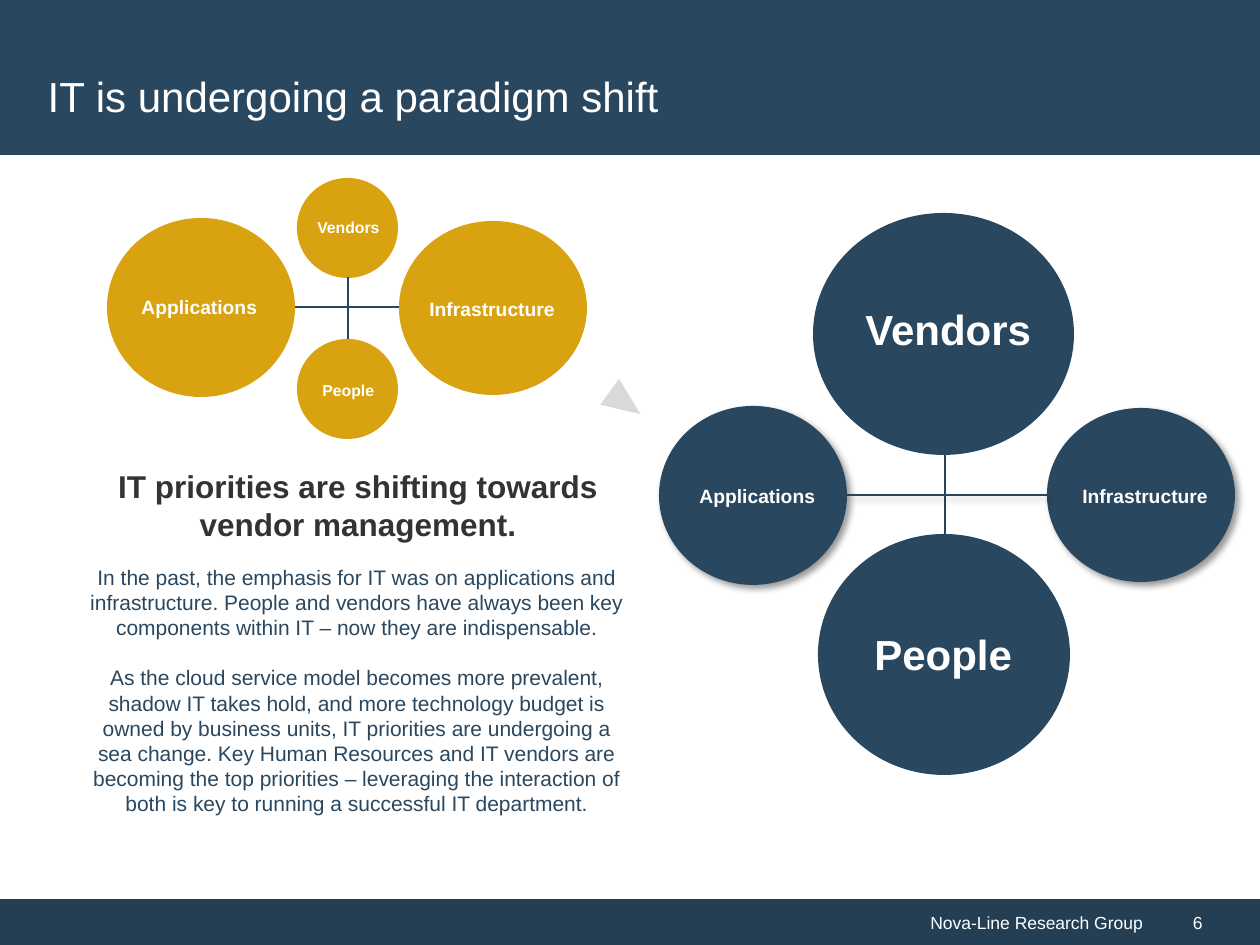
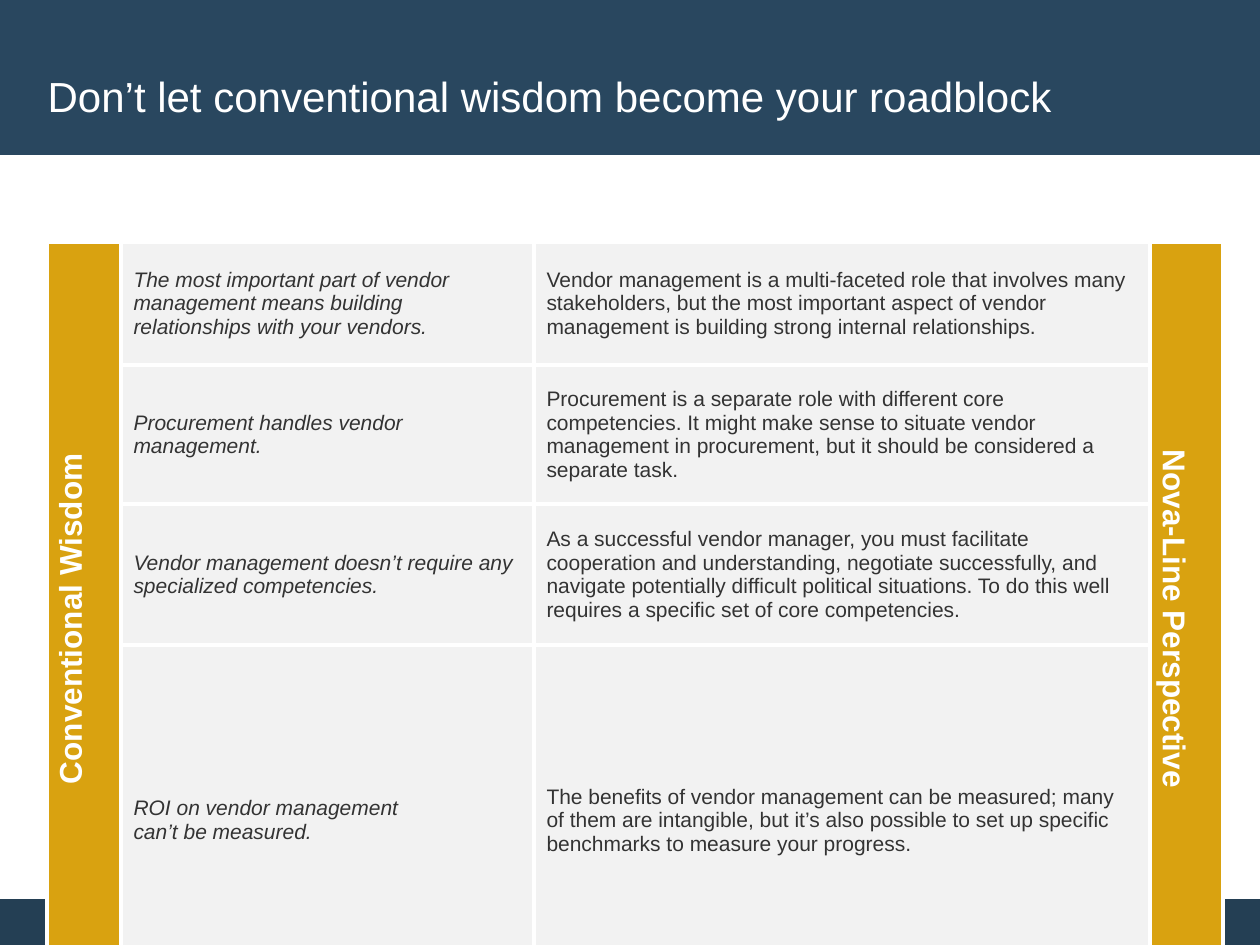
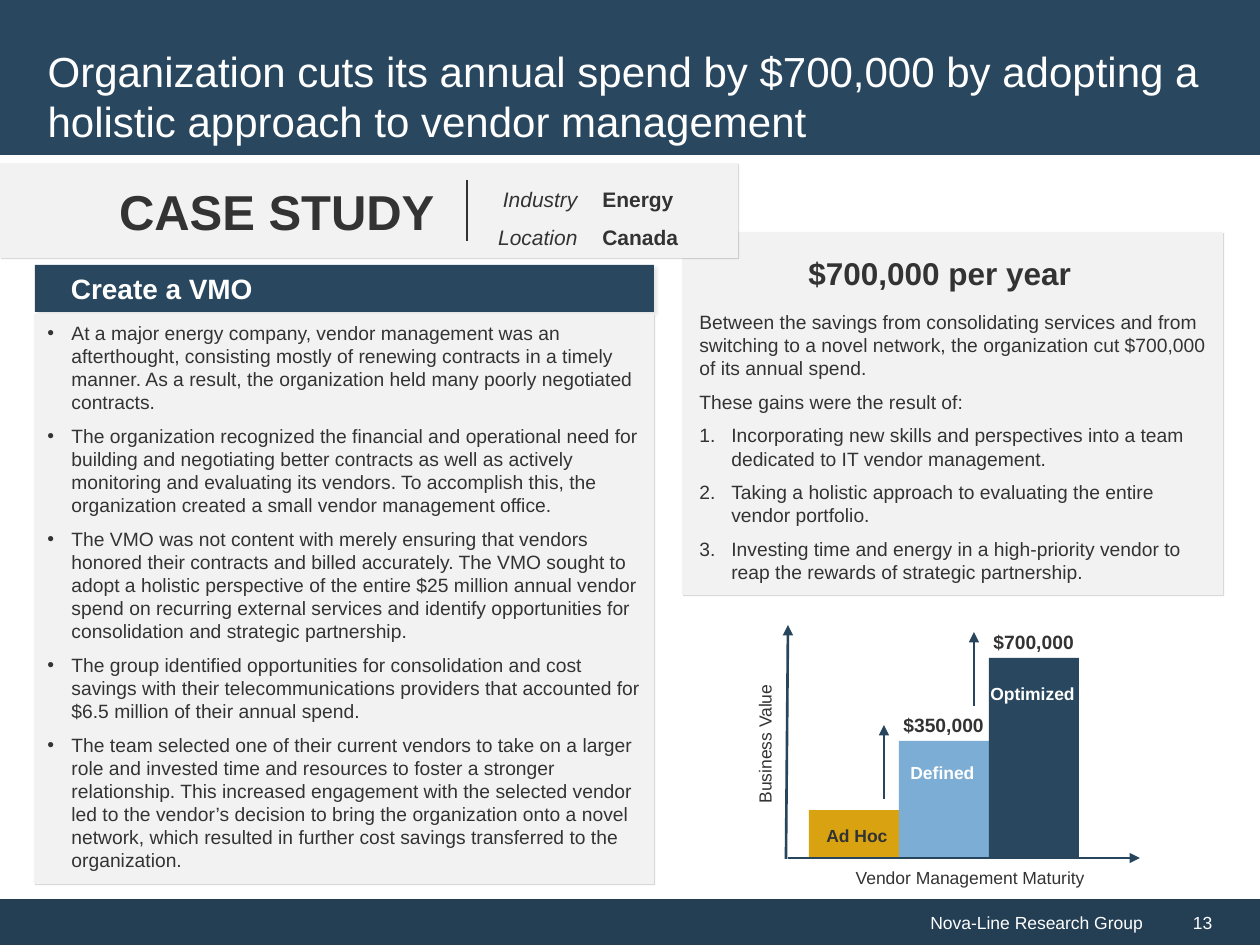
from lxml.etree import SubElement
from pptx import Presentation
from pptx.dml.color import RGBColor
from pptx.enum.shapes import MSO_CONNECTOR, MSO_SHAPE
from pptx.enum.text import MSO_ANCHOR, MSO_AUTO_SIZE, PP_ALIGN
from pptx.oxml.ns import qn
from pptx.util import Pt

# Shared look
PX = 914400 / 126
NAVY, DARK, GOLD, SKY = "29475F", "243F54", "D9A210", "7CADD4"
RULE, INK, PALE, GREY, WHITE = "27465E", "333333", "F2F2F2", "D9D9D9", "FFFFFF"
FONT = "Arial"
RECT, OVAL = MSO_SHAPE.RECTANGLE, MSO_SHAPE.OVAL
LEFT, MID, RIGHT = PP_ALIGN.LEFT, PP_ALIGN.CENTER, PP_ALIGN.RIGHT
BANDS = [((0, 899, 1155, 46), DARK), ((1155, 899, 105, 46), DARK), ((0, 0, 1260, 155), NAVY)]
TITLE = (35, 35, 1188, 121)
GROUP = "Nova-Line Research Group"
# Shadows: opacity %, blur pt, distance pt
DEEP, SOFT, HEAD = (40, 4, 3), (14, 0, 1), (10, 2, 2)

# Slide 1: name, disc, label, size, shadow
PAST = [
    ("Vendors", (297, 178, 101, 100), (305, 212, 88, 32), 9, None),
    ("Applications", (107, 218, 188, 179), (129, 289, 157, 37), 11, None),
    ("Infrastructure", (399, 221, 188, 174), (417, 291, 152, 37), 11, None),
    ("People", (297, 339, 101, 100), (310, 375, 81, 32), 9, None),
]
NOW = [
    ("Vendors", (813, 213, 261, 242), (853, 297, 193, 63), 24, None),
    ("People", (818, 534, 252, 241), (862, 622, 174, 63), 24, None),
    ("Applications", (659, 406, 188, 179), (687, 478, 145, 37), 11, DEEP),
    ("Infrastructure", (1047, 408, 188, 174), (1070, 478, 152, 37), 11, DEEP),
]
LINKS = [
    ((348, 277), (348, 339), None), ((295, 307), (399, 307), None),
    ((945, 455), (945, 534), None), ((847, 495), (1047, 495), DEEP),
]
SHIFT = "IT priorities are shifting towards vendor management."
STORY = [
    "In the past, the emphasis for IT was on applications and infrastructure. People and vendors "
    "have always been key components within IT – now they are indispensable.",
    "As the cloud service model becomes more prevalent, shadow IT takes hold, and more technology "
    "budget is owned by business units, IT priorities are undergoing a sea change. Key Human "
    "Resources and IT vendors are becoming the top priorities – leveraging the interaction of both "
    "is key to running a successful IT department.",
]

# Slide 2
SIDES = [(0, "Conventional Wisdom", "vert270", MSO_ANCHOR.MIDDLE),
         (3, "Nova-Line Perspective", "vert", MSO_ANCHOR.TOP)]
COLS, ROWS = [74, 413, 616, 73], [123, 139, 141, 141]
VIEWS = [
    ("The most important part of vendor management means building relationships with your vendors.",
     "Vendor management is a multi-faceted role that involves many stakeholders, but the most "
     "important aspect of vendor management is building strong internal relationships."),
    ("Procurement handles vendor management.",
     "Procurement is a separate role with different core competencies. It might make sense to "
     "situate vendor management in procurement, but it should be considered a separate task."),
    ("Vendor management doesn’t require any specialized competencies.",
     "As a successful vendor manager, you must facilitate cooperation and understanding, negotiate "
     "successfully, and navigate potentially difficult political situations. To do this well "
     "requires a specific set of core competencies."),
    ("ROI on vendor management\ncan’t be measured.",
     "The benefits of vendor management can be measured; many of them are intangible, but it’s also "
     "possible to set up specific benchmarks to measure your progress."),
]

# Slide 3
STEPS = [
    "At a major energy company, vendor management was an afterthought, consisting mostly of renewing "
    "contracts in a timely manner. As a result, the organization held many poorly negotiated "
    "contracts.",
    "The organization recognized the financial and operational need for building and negotiating "
    "better contracts as well as actively monitoring and evaluating its vendors. To accomplish this, "
    "the organization created a small vendor management office.",
    "The VMO was not content with merely ensuring that vendors honored their contracts and billed "
    "accurately. The VMO sought to adopt a holistic perspective of the entire $25 million annual "
    "vendor spend on recurring external services and identify opportunities for consolidation and "
    "strategic partnership.",
    "The group identified opportunities for consolidation and cost savings with their "
    "telecommunications providers that accounted for $6.5 million of their annual spend.",
    "The team selected one of their current vendors to take on a larger role and invested time and "
    "resources to foster a stronger relationship. This increased engagement with the selected vendor "
    "led to the vendor’s decision to bring the organization onto a novel network, which resulted in "
    "further cost savings transferred to the organization.",
]
GAINS = [
    "Between the savings from consolidating services and from switching to a novel network, the "
    "organization cut $700,000 of its annual spend.",
    "These gains were the result of:",
]
CAUSES = [
    "Incorporating new skills and perspectives into a team dedicated to IT vendor management.",
    "Taking a holistic approach to evaluating the entire vendor portfolio.",
    "Investing time and energy in a high-priority vendor to reap the rewards of strategic partnership.",
]
# Name, fill, ink, height, name box, value
BARS = [
    ("Ad Hoc", GOLD, INK, 47, (814, 819, 92, 34), None),
    ("Defined", SKY, WHITE, 116, (898, 756, 97, 34), "$350,000"),
    ("Optimized", NAVY, WHITE, 199, (978, 677, 122, 34), "$700,000"),
]
BAR_X, BAR_W, BASE = 809, 90, 857


# Helpers
def px(*nums):
    return [round(n * PX) for n in nums]


def tint(code):
    return RGBColor.from_string(code)


def write(frame, text, size=11, color=INK, bold=False, italic=False, align=LEFT,
          after=0, lines=None, hang=0, bullet=None):
    """Append one paragraph per item of text."""
    for item in [text] if isinstance(text, str) else text:
        par = frame.add_paragraph() if frame.text else frame.paragraphs[0]
        par.alignment = align
        par.space_after = Pt(after)
        if lines:
            par.line_spacing = lines
        if bullet:
            props = par._p.get_or_add_pPr()
            props.set("marL", str(px(hang)[0]))
            props.set("indent", str(px(-hang)[0]))
            if bullet == "1.":
                SubElement(props, qn("a:buAutoNum"), type="arabicPeriod")
            else:
                SubElement(props, qn("a:buFont"), typeface=FONT)
                SubElement(props, qn("a:buChar"), char=bullet)
        run = par.add_run()
        run.text = item
        font = run.font
        font.name, font.size, font.bold, font.italic = FONT, Pt(size), bold, italic
        font.color.rgb = tint(color)


def shade(shape, shadow):
    effect = SubElement(shape._element.spPr, qn("a:effectLst"))
    if shadow:
        alpha, blur, dist = shadow
        outer = SubElement(effect, qn("a:outerShdw"), blurRad=str(Pt(blur)), dist=str(Pt(dist)),
                           dir="2700000", algn="tl", rotWithShape="0")
        black = SubElement(outer, qn("a:srgbClr"), val="000000")
        SubElement(black, qn("a:alpha"), val=str(alpha * 1000))


def draw(slide, kind, at, fill, shadow=None):
    shape = slide.shapes.add_shape(kind, *px(*at))
    shape.fill.solid()
    shape.fill.fore_color.rgb = tint(fill)
    shape.line.fill.background()
    shade(shape, shadow)
    return shape


def fit(shape, wrap=True, anchor=MSO_ANCHOR.TOP, inset=None):
    frame = shape.text_frame
    frame.word_wrap, frame.vertical_anchor = wrap, anchor
    frame.auto_size = MSO_AUTO_SIZE.NONE
    if inset:
        frame.margin_left = px(inset)[0]
    return frame


def label(slide, at, text, wrap=True, anchor=MSO_ANCHOR.TOP, inset=None, turn=0, **form):
    shape = slide.shapes.add_textbox(*px(*at))
    shape.rotation = turn
    frame = fit(shape, wrap, anchor, inset)
    write(frame, text, **form)
    return frame


def join(slide, start, end, color=RULE, width=0.75, arrow=False, shadow=None):
    line = slide.shapes.add_connector(MSO_CONNECTOR.STRAIGHT, *px(*start, *end))
    line.line.color.rgb = tint(color)
    line.line.width = Pt(width)
    if arrow:
        SubElement(line.line._get_or_add_ln(), qn("a:tailEnd"), type="triangle")
    shade(line, shadow)


def start(deck, title, page=None):
    slide = deck.slides.add_slide(deck.slide_layouts[5])
    head = slide.shapes.title
    head.left, head.top, head.width, head.height = px(*TITLE)
    write(fit(head, anchor=MSO_ANCHOR.MIDDLE), title, size=24, color=WHITE)
    if page:
        form = dict(size=10, color=WHITE, anchor=MSO_ANCHOR.MIDDLE)
        label(slide, BANDS[0][0], GROUP, align=RIGHT, **form)
        label(slide, BANDS[1][0], page, inset=38, **form)
    return slide


def band(deck, slide):
    """Put the bands on the layout, behind everything else."""
    tree = deck.slide_layouts[5].shapes._spTree
    for spot, (at, fill) in enumerate(BANDS, 2):
        tree.insert(spot, draw(slide, RECT, at, fill)._element)


# Slides
def shift(deck):
    slide = start(deck, "IT is undergoing a paradigm shift", "6")
    band(deck, slide)
    for discs, fill in ((PAST, GOLD), (NOW, NAVY)):
        for name, disc, spot, size, shadow in discs:
            draw(slide, OVAL, disc, fill, shadow)
            tag = draw(slide, RECT, spot, fill)
            write(fit(tag, wrap=False), name, size=size, color=WHITE, bold=True)
    for begin, end, shadow in LINKS:
        join(slide, begin, end, shadow=shadow)
    label(slide, (94, 461, 528, 89), SHIFT, size=18, bold=True, align=MID)
    label(slide, (73, 558, 568, 267), STORY, size=12, color=NAVY, align=MID, after=14.4)
    draw(slide, MSO_SHAPE.ISOSCELES_TRIANGLE, (609, 384, 32, 38), GREY).rotation = 126


def paint(cell, fill, anchor=MSO_ANCHOR.MIDDLE):
    props = cell._tc.get_or_add_tcPr()
    for side in ("lnL", "lnR", "lnT", "lnB"):
        edge = SubElement(props, qn("a:" + side), w=str(Pt(2.25)))
        SubElement(SubElement(edge, qn("a:solidFill")), qn("a:srgbClr"), val=WHITE)
    cell.fill.solid()
    cell.fill.fore_color.rgb = tint(fill)
    cell.vertical_anchor = anchor


def wisdom(deck):
    slide = start(deck, "Don’t let conventional wisdom become your roadblock")
    at = px(47, 242, sum(COLS), sum(ROWS))
    grid = slide.shapes.add_table(len(ROWS), len(COLS), *at).table
    grid.first_row = grid.horz_banding = False
    for parts, sizes, side in ((grid.columns, COLS, "width"), (grid.rows, ROWS, "height")):
        for part, size in zip(parts, sizes):
            setattr(part, side, px(size)[0])
    for row, pair in enumerate(VIEWS):
        for col, text in enumerate(pair, 1):
            cell = grid.cell(row, col)
            paint(cell, PALE)
            write(cell.text_frame, text.split("\n"), size=12, italic=col == 1)
    for col, text, turn, anchor in SIDES:
        for row in range(len(ROWS)):
            paint(grid.cell(row, col), GOLD, anchor)
        cell = grid.cell(0, col)
        cell.merge(grid.cell(len(ROWS) - 1, col))
        cell._tc.get_or_add_tcPr().set("vert", turn)
        write(cell.text_frame, text, size=18, color=WHITE, bold=True, align=MID)


def bars(slide):
    join(slide, (786, 859), (788, 625), width=1.5, arrow=True)
    join(slide, (788, 858), (1140, 858), width=1.5, arrow=True)
    for spot, (name, fill, ink, tall, at, value) in enumerate(BARS):
        left, top = BAR_X + spot * BAR_W, BASE - tall
        draw(slide, RECT, (left, top, BAR_W, tall), fill)
        label(slide, at, name, wrap=False, size=10, color=ink, bold=True)
        if value:
            label(slide, (left - 8, top - 34, 111, 37), value, wrap=False, bold=True)
            foot = top + 58 if spot == 1 else top + 48
            join(slide, (left - 15, foot), (left - 15, foot - 74), width=1.5, arrow=True)
    label(slide, (814, 861, 312, 34), "Vendor Management Maturity", size=10, align=MID)
    label(slide, (682, 727, 166, 34), "Business Value", turn=270, size=10, align=MID)


def study(deck):
    slide = start(deck, "Organization cuts its annual spend by $700,000 by adopting a holistic "
                        "approach to vendor management", "13")
    # Case band
    draw(slide, RECT, (682, 232, 541, 363), PALE, SOFT)
    case = draw(slide, RECT, (0, 163, 738, 95), PALE, SOFT)
    write(fit(case, anchor=MSO_ANCHOR.MIDDLE, inset=119), "CASE STUDY", size=28, bold=True)
    join(slide, (467, 180), (467, 241), color=INK)
    label(slide, (470, 168, 120, 89), ["Industry", "Location"], size=12, italic=True,
          align=RIGHT, lines=1.5)
    label(slide, (590, 168, 136, 89), ["Energy", "Canada"], size=12, bold=True, lines=1.5)
    # Steps
    head = draw(slide, RECT, (35, 265, 619, 47), NAVY, HEAD)
    write(fit(head, anchor=MSO_ANCHOR.MIDDLE, inset=36), "Create a VMO", size=16, color=WHITE,
          bold=True)
    draw(slide, RECT, (34, 314, 620, 570), PALE, SOFT)
    label(slide, (35, 315, 622, 568), STEPS, after=6, hang=24, bullet="•")
    # Gains
    label(slide, (796, 248, 320, 50), "$700,000 per year", wrap=False, size=18, bold=True)
    frame = label(slide, (687, 304, 541, 289), GAINS, after=6)
    write(frame, CAUSES, after=6, hang=32, bullet="1.")
    bars(slide)


def main():
    deck = Presentation()
    deck.slide_width, deck.slide_height = px(1260, 945)
    for build in (shift, wisdom, study):
        build(deck)
    deck.save("out.pptx")


if __name__ == "__main__":
    main()
